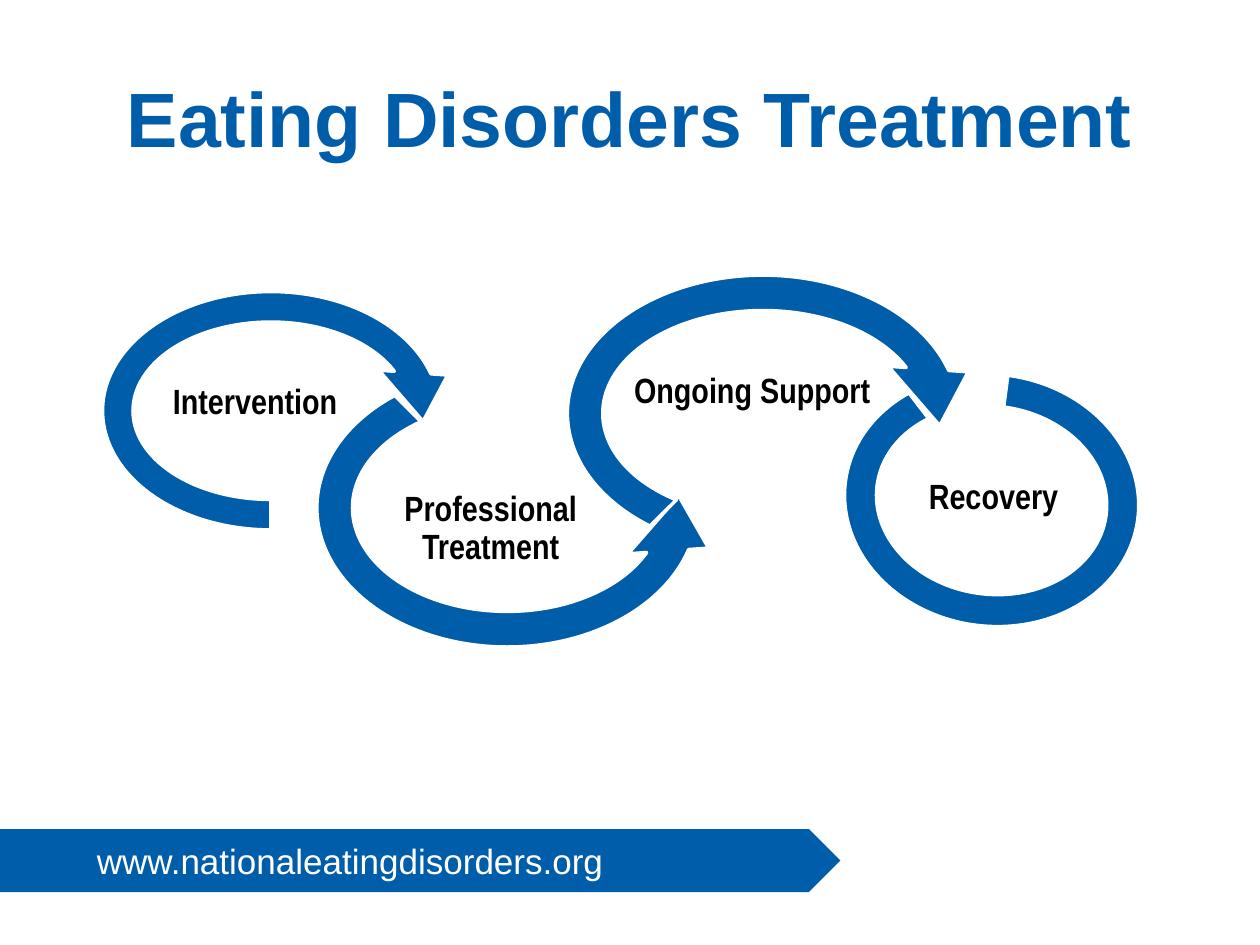
from dataclasses import dataclass

from pptx import Presentation
from pptx.dml.color import RGBColor
from pptx.enum.shapes import MSO_SHAPE
from pptx.enum.text import MSO_ANCHOR, PP_ALIGN
from pptx.util import Inches, Pt

PENTAGON = MSO_SHAPE.PENTAGON
CLOCKWISE = MSO_SHAPE.CIRCULAR_ARROW
COUNTERCLOCKWISE = MSO_SHAPE.LEFT_CIRCULAR_ARROW
ARC = MSO_SHAPE.BLOCK_ARC
LEFT, CENTER = PP_ALIGN.LEFT, PP_ALIGN.CENTER
TOP, MIDDLE = MSO_ANCHOR.TOP, MSO_ANCHOR.MIDDLE

COLORS = {"blue": "005DAA", "white": "FFFFFF", "black": "000000"}
Box = tuple[float, float, float, float]


@dataclass
class TextStyle:
    font: dict
    color: str
    alignment: PP_ALIGN = CENTER
    anchor: MSO_ANCHOR = MIDDLE
    line_spacing: float = 1.0
    margins: tuple[float, float] = (0.1, 0.05)


@dataclass
class Step:
    label: str
    label_box: Box
    kind: MSO_SHAPE
    loop_box: Box
    adjustments: tuple[float, ...]
    rotation: float = 270


TITLE = TextStyle({"name": "Arial", "size": Pt(44), "bold": True}, "blue")
ADDRESS = TextStyle({"name": "Arial", "size": Pt(20)}, "white", LEFT, TOP)
LABEL = TextStyle({"name": "Arial Narrow", "size": Pt(20), "bold": True}, "black",
                  line_spacing=0.9, margins=(0.01, 0.01))

STEPS = [
    Step("Intervention", (1.24, 2.92, 1.57, 0.56),
         CLOCKWISE, (1.05, 1.77, 2.2, 2.98), (0.11, 11.42, 45, 108, 0.125)),
    Step("Professional Treatment", (3.01, 3.76, 1.77, 0.88),
         COUNTERCLOCKWISE, (2.74, 2.34, 2.57, 3.38), (0.11, 11.42, 63, 189, 0.125)),
    Step("Ongoing Support", (4.91, 2.83, 2.12, 0.56),
         CLOCKWISE, (4.78, 1.55, 2.55, 3.46), (0.11, 11.42, 45, 135, 0.125)),
    Step("Recovery", (7.14, 3.56, 1.49, 0.78),
         ARC, (6.87, 2.8, 2, 2.34), (0, 189, 0.127), 277.4),
]


def color(name: str) -> RGBColor:
    return RGBColor.from_string(COLORS[name])


def add_text(slide, text: str, box: Box, style: TextStyle) -> None:
    frame = slide.shapes.add_textbox(*map(Inches, box)).text_frame
    horizontal, vertical = map(Inches, style.margins)
    settings = {
        "word_wrap": True, "vertical_anchor": style.anchor,
        "margin_left": horizontal, "margin_right": horizontal,
        "margin_top": vertical, "margin_bottom": vertical,
    }
    for name, value in settings.items():
        setattr(frame, name, value)
    paragraph = frame.paragraphs[0]
    paragraph.alignment = style.alignment
    paragraph.line_spacing = style.line_spacing
    run = paragraph.add_run()
    run.text = text
    for name, value in style.font.items():
        setattr(run.font, name, value)
    run.font.color.rgb = color(style.color)


def add_blue_shape(slide, kind: MSO_SHAPE, box: Box):
    shape = slide.shapes.add_shape(kind, *map(Inches, box))
    shape.shadow.inherit = False
    shape.fill.solid()
    shape.fill.fore_color.rgb = color("blue")
    shape.line.fill.background()
    return shape


def add_step(slide, step: Step) -> None:
    loop = add_blue_shape(slide, step.kind, step.loop_box)
    loop.rotation = step.rotation
    for index, value in enumerate(step.adjustments):
        loop.adjustments[index] = value
    loop.line.color.rgb = color("white")
    loop.line.width = Pt(2)
    add_text(slide, step.label, step.label_box, LABEL)


def main() -> None:
    """Build the eating disorders treatment slide."""
    presentation = Presentation()
    presentation.slide_width = Inches(10)
    presentation.slide_height = Inches(7.5)
    slide = presentation.slides.add_slide(presentation.slide_layouts[6])
    add_blue_shape(slide, PENTAGON, (0, 6.58, 6.67, 0.5))
    add_text(slide, "www.nationaleatingdisorders.org", (0.67, 6.61, 5.83, 0.44), ADDRESS)
    add_text(slide, "Eating Disorders Treatment", (0.5, 0.3, 9, 1.25), TITLE)
    for step in STEPS:
        add_step(slide, step)
    presentation.save("out.pptx")


if __name__ == "__main__":
    main()
